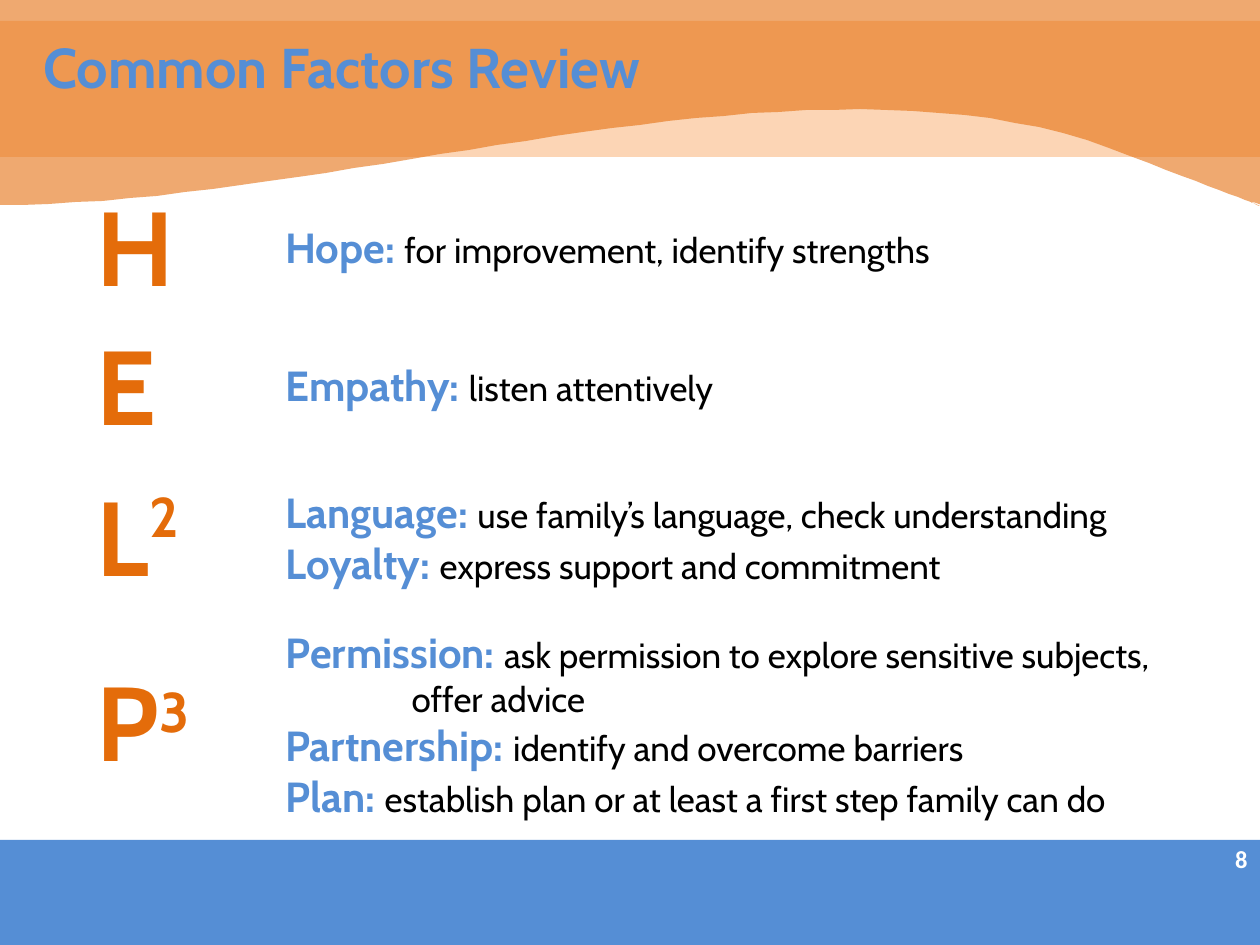
"""Build the Common Factors Review slide: a wave banner and the HELP table."""
import pptx
import pptx.dml.color
import pptx.enum.shapes
import pptx.enum.text
import pptx.oxml
import pptx.oxml.ns
import pptx.util

PX = 7257
BLUE, ORANGE, PEACH = "558ED5", "E46C0A", "FCD5B5"
WHITE, BLACK = "FFFFFF", "000000"
FONT = "Cabin"
NO_GRID_STYLE = "{2D5ABB26-0587-4C30-8999-92F81FD0307C}"

TITLE = "Common Factors Review"
PAGE_NUMBER = "8"
WAVE_CURVES = [
    [(-4, 205), (344, 205), (774, 44), (1087, 140)],
    [(1087, 140), (1399, 258), (1202, 186), (1263, 205)],
]
COLUMN_WIDTHS = [189, 987]
# letter, exponent, exponent baseline in percent, row height, terms with their lines
ROWS = [
    ("H", "", 0, 125, [("Hope: ", ["for improvement, identify strengths"])]),
    ("E", "", 0, 124, [("Empathy: ", ["listen attentively"])]),
    ("L", "2", 40, 165, [
        ("Language: ", ["use family’s language, check understanding"]),
        ("Loyalty: ", ["express support and commitment"]),
    ]),
    ("P", "3", 30, 176, [
        ("Permission: ", ["ask permission to explore sensitive subjects, ", "\toffer advice"]),
        ("Partnership: ", ["identify and overcome barriers"]),
        ("Plan: ", ["establish plan or at least a first step family can do"]),
    ]),
]


def px(*values):
    return [pptx.util.Emu(value * PX) for value in values]


def color(value):
    return pptx.dml.color.RGBColor.from_string(value)


def style(font, size, value, bold=True, name=FONT):
    font.size, font.bold, font.name = pptx.util.Pt(size), bold, name
    font.color.rgb = color(value)


def add_run(paragraph, text, size, value, bold=True):
    run = paragraph.add_run()
    run.text = text
    style(run.font, size, value, bold)
    return run


def paint(shape, value):
    shape.shadow.inherit = False
    shape.fill.solid()
    shape.fill.fore_color.rgb = color(value)
    shape.line.fill.background()


def add_band(slide, box, value):
    rectangle = pptx.enum.shapes.MSO_SHAPE.RECTANGLE
    paint(slide.shapes.add_shape(rectangle, *px(*box)), value)


def bezier(points, steps=40):
    for step in range(steps + 1):
        t = step / steps
        weights = ((1 - t) ** 3, 3 * t * (1 - t) ** 2, 3 * t * t * (1 - t), t ** 3)
        yield tuple(sum(w * p[axis] for w, p in zip(weights, points)) for axis in (0, 1))


def add_wave(slide):
    outline = [point for curve in WAVE_CURVES for point in bezier(curve)]
    builder = slide.shapes.build_freeform(-4, 0, scale=float(PX))
    builder.add_line_segments(outline + [(1263, 0)], close=True)
    wave = builder.convert_to_shape()
    paint(wave, ORANGE)
    fill_color = wave.fill._xPr.find(".//" + pptx.oxml.ns.qn("a:srgbClr"))
    alpha = pptx.oxml.parse_xml(f'<a:alpha {pptx.oxml.ns.nsdecls("a")} val="58000"/>')
    fill_color.append(alpha)


def add_text(slide, box, text, size, value, name=FONT):
    frame = slide.shapes.add_textbox(*px(*box)).text_frame
    frame.word_wrap = True
    paragraph = frame.paragraphs[0]
    paragraph.text = text
    style(paragraph.font, size, value, name=name)
    return frame


def add_tab_stop(paragraph, position):
    tabs = pptx.oxml.parse_xml(
        f'<a:tabLst {pptx.oxml.ns.nsdecls("a")}><a:tab pos="{position}" algn="l"/></a:tabLst>')
    paragraph._p.get_or_add_pPr().append(tabs)


def fill_letter(cell, letter, exponent, baseline):
    paragraph = cell.text_frame.paragraphs[0]
    add_run(paragraph, letter, 60, ORANGE)
    if exponent:
        run = add_run(paragraph, exponent, 55, ORANGE)
        run.font._element.set("baseline", str(baseline * 1000))


def fill_terms(cell, terms):
    frame = cell.text_frame
    for index, (term, lines) in enumerate(terms):
        paragraph = frame.add_paragraph() if index else frame.paragraphs[0]
        if len(lines) > 1:
            add_tab_stop(paragraph, pptx.util.Inches(1))
        add_run(paragraph, term, 24, BLUE)
        for number, line in enumerate(lines):
            if number:
                paragraph.add_line_break()
            add_run(paragraph, line, 20, BLACK, False)


def add_help_table(slide):
    height = sum(row[3] for row in ROWS)
    box = px(84, 179, sum(COLUMN_WIDTHS), height)
    table = slide.shapes.add_table(len(ROWS), len(COLUMN_WIDTHS), *box).table
    table.first_row = table.horz_banding = False
    table._tbl.tblPr.find(pptx.oxml.ns.qn("a:tableStyleId")).text = NO_GRID_STYLE
    for column, width in zip(table.columns, px(*COLUMN_WIDTHS)):
        column.width = width
    for index, (letter, exponent, baseline, row_height, terms) in enumerate(ROWS):
        table.rows[index].height = px(row_height)[0]
        fill_letter(table.cell(index, 0), letter, exponent, baseline)
        fill_terms(table.cell(index, 1), terms)
    for cell in table.iter_cells():
        cell.fill.background()
        cell.vertical_anchor = pptx.enum.text.MSO_ANCHOR.MIDDLE


def main():
    presentation = pptx.Presentation()
    presentation.slide_width, presentation.slide_height = px(1260, 945)
    slide = presentation.slides.add_slide(presentation.slide_layouts[6])
    add_band(slide, (-1, 21, 1264, 136), PEACH)
    add_wave(slide)
    add_band(slide, (-1, 840, 1273, 116), BLUE)
    add_text(slide, (31, 26, 1099, 131), TITLE, 32, BLUE)
    add_help_table(slide)
    number = add_text(slide, (966, 834, 294, 50), PAGE_NUMBER, 14, WHITE, "Calibri")
    number.vertical_anchor = pptx.enum.text.MSO_ANCHOR.MIDDLE
    number.paragraphs[0].alignment = pptx.enum.text.PP_ALIGN.RIGHT
    presentation.save("out.pptx")


if __name__ == "__main__":
    main()
